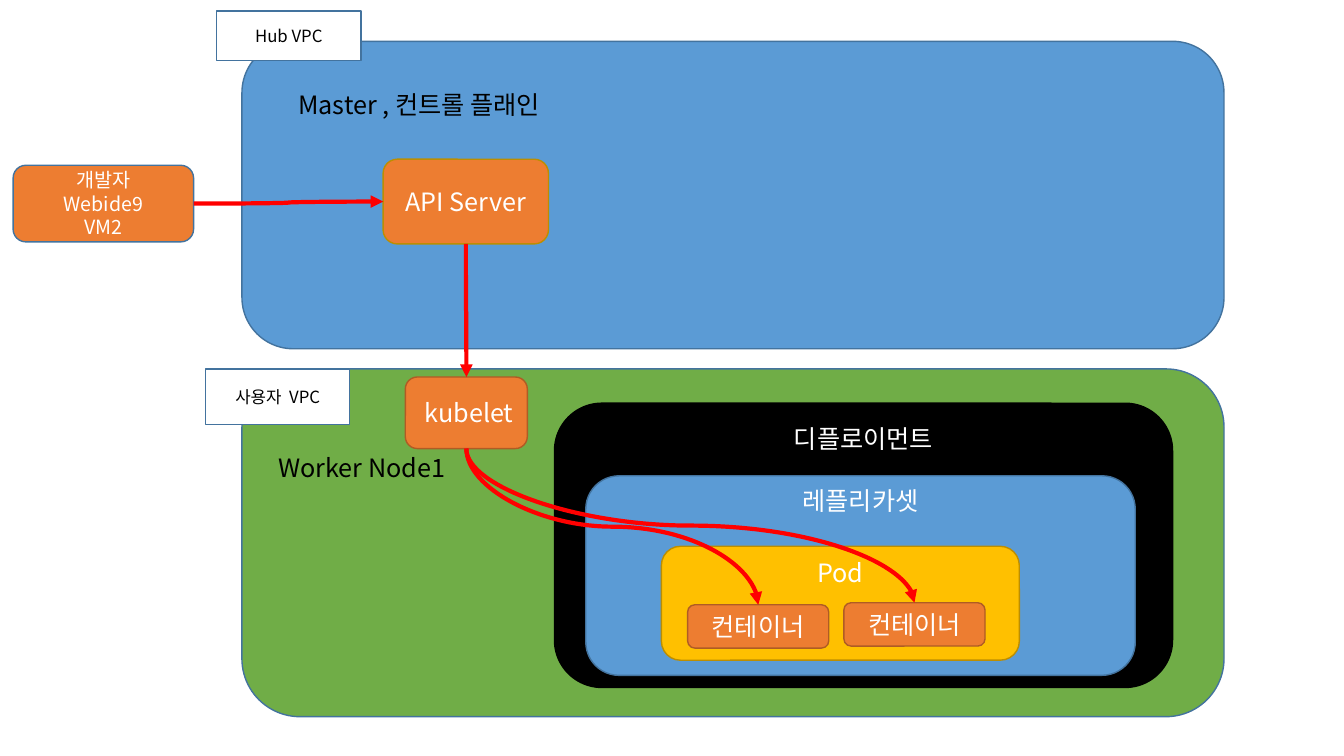
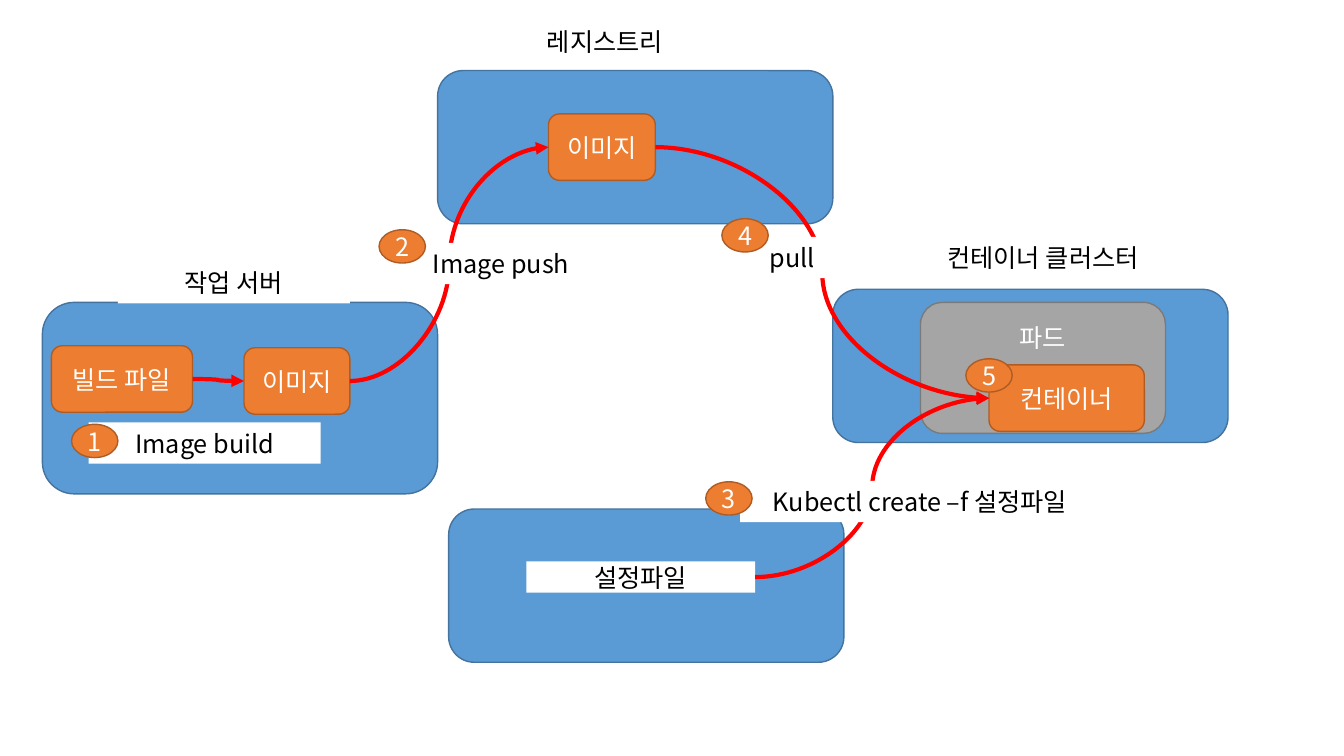
from lxml import etree
from pptx import Presentation
from pptx.dml.color import RGBColor
from pptx.enum.shapes import MSO_CONNECTOR, MSO_SHAPE
from pptx.enum.text import MSO_ANCHOR, PP_ALIGN
from pptx.oxml.ns import qn
from pptx.util import Inches, Pt

ROUND, RECT, OVAL = MSO_SHAPE.ROUNDED_RECTANGLE, MSO_SHAPE.RECTANGLE, MSO_SHAPE.OVAL
CURVE = MSO_CONNECTOR.CURVE
TOP, MIDDLE = MSO_ANCHOR.TOP, MSO_ANCHOR.MIDDLE
LEFT, CENTER = PP_ALIGN.LEFT, PP_ALIGN.CENTER

FONT = "Noto Sans CJK KR"
WHITE, BLACK, RED = "FFFFFF", "000000", "FF0000"
BLUE, ORANGE, GREEN, GOLD, GRAY = "5B9BD5", "ED7D31", "70AD47", "FFC000", "A5A5A5"
BLUE_EDGE, ORANGE_EDGE, GOLD_EDGE, GRAY_EDGE = "43739E", "AF5C24", "BD8E00", "7A7A7A"

# Style: preset (None for a plain text box), fill, line, text colour, text size
STYLES = {
    "zone": (ROUND, BLUE, BLUE_EDGE, WHITE, 18),
    "worker": (ROUND, GREEN, BLUE_EDGE, WHITE, 18),
    "deploy": (ROUND, BLACK, BLACK, WHITE, 18),
    "pod": (ROUND, GOLD, GOLD_EDGE, WHITE, 18),
    "gray pod": (ROUND, GRAY, GRAY_EDGE, WHITE, 18),
    "node": (ROUND, ORANGE, ORANGE_EDGE, WHITE, 18),
    "server": (ROUND, ORANGE, GOLD_EDGE, WHITE, 18),
    "client": (ROUND, ORANGE, BLUE_EDGE, WHITE, 14),
    "tag": (RECT, WHITE, BLUE_EDGE, BLACK, 12),
    "label": (RECT, WHITE, None, BLACK, 18),
    "heading": (None, None, None, BLACK, 18),
    "badge": (OVAL, ORANGE, ORANGE_EDGE, WHITE, 18),
}
# Text frame settings that differ from the centred default
FRAMES = {
    "heading": {"vertical_anchor": TOP},
    "badge": {"margin_left": 0, "margin_right": 0, "margin_top": 0, "margin_bottom": 0},
}

# Places are left, top, width, height in grid cells (1333 columns, 750 rows).
# A last number is the gap above a caption set at the top of its box.
SLIDES = [
    {
        "boxes": [
            ("client", "client", (13, 164, 179, 76), "개발자\nWebide9\nVM2"),
            ("master", "zone", (240, 41, 974, 305), ""),
            ("master tag", "tag", (215, 11, 143, 49), "Hub VPC"),
            ("api", "server", (380, 158, 164, 84), "API Server"),
            ("worker", "worker", (240, 366, 974, 345), ""),
            ("worker tag", "tag", (204, 366, 143, 55), "사용자  VPC"),
            ("deployment", "deploy", (550, 400, 613, 282), "디플로이먼트", 6.5),
            ("replica set", "zone", (581, 472, 545, 198), "레플리카셋", 0),
            ("pod", "pod", (656, 542, 355, 113), "Pod", 5),
            ("container 1", "node", (682, 600, 140, 43), "컨테이너"),
            ("container 2", "node", (837, 598, 140, 43), "컨테이너"),
            ("worker heading", "heading", (266, 444, 202, 40), "Worker Node1"),
            ("master heading", "heading", (286, 84, 311, 40), "Master , 컨트롤 플래인"),
            ("kubelet", "node", (402, 374, 121, 71), " kubelet"),
        ],
        "arrows": [
            ("client", "api", "across"),
            ("api", "kubelet", "down"),
            ("kubelet", "container 2", "down"),
            ("kubelet", "container 1", "down"),
        ],
        "labels": [],
    },
    {
        "boxes": [
            ("work server", "zone", (42, 300, 392, 190), ""),
            ("registry", "zone", (434, 70, 392, 152), ""),
            ("cluster", "zone", (826, 287, 392, 152), ""),
            ("settings", "zone", (445, 505, 392, 152), ""),
            ("build file", "node", (51, 343, 140, 66), "빌드 파일"),
            ("built image", "node", (242, 345, 105, 66), "이미지"),
            ("stored image", "node", (544, 113, 106, 66), "이미지"),
            ("pod", "gray pod", (913, 300, 243, 130), "파드", 13),
            ("settings file", "label", (522, 557, 227, 31), "설정파일"),
            ("container", "node", (981, 362, 154, 66), "컨테이너"),
        ],
        "arrows": [
            ("build file", "built image", "across"),
            ("built image", "stored image", "across"),
            ("stored image", "container", "across"),
            ("settings file", "container", "across"),
        ],
        "labels": [
            ("work server name", "label", (117, 260, 230, 41), "작업 서버"),
            ("registry name", "label", (485, 21, 230, 41), "레지스트리"),
            ("cluster name", "label", (891, 235, 287, 41), "컨테이너 클러스터"),
            ("build", "label", (88, 419, 230, 41), "Image build"),
            ("push", "label", (382, 241, 230, 41), "Image push"),
            ("pull", "label", (671, 235, 230, 41), "pull"),
            ("create", "label", (734, 477, 357, 41), "Kubectl create –f 설정파일"),
            ("step 1", "badge", (71, 421, 46, 33), "1"),
            ("step 2", "badge", (376, 228, 46, 33), "2"),
            ("step 3", "badge", (700, 478, 46, 33), "3"),
            ("step 4", "badge", (716, 217, 46, 33), "4"),
            ("step 5", "badge", (958, 356, 46, 33), "5"),
        ],
    },
]

prs = Presentation()
prs.slide_width, prs.slide_height = Inches(13.33), Inches(7.5)
COL, ROW = prs.slide_width / 1333, prs.slide_height / 750


def paint(fmt, color):
    """Give a fill or font colour format a solid hex colour, or no fill."""
    if color is None:
        fmt.background()
    else:
        fmt.solid()
        fmt.fore_color.rgb = RGBColor.from_string(color)


def add_box(s, style, place, text, gap=None):
    preset, fill, line, color, size = STYLES[style]
    x, y, w, h = place
    area = int(x * COL), int(y * ROW), int(w * COL), int(h * ROW)
    if preset is None:
        sp = s.shapes.add_textbox(*area)
    else:
        sp = s.shapes.add_shape(preset, *area)
        sp.shadow.inherit = False
        paint(sp.fill, fill)
        paint(sp.line.fill, line)
        if line:
            sp.line.width = Pt(1)
    if not text:
        return
    tf = sp.text_frame
    frame = {"word_wrap": True, "vertical_anchor": MIDDLE} | FRAMES.get(style, {})
    if gap is not None:
        frame |= {"vertical_anchor": TOP, "margin_top": int(gap * ROW)}
    for key, value in frame.items():
        setattr(tf, key, value)
    tf.text = text
    for p in tf.paragraphs:
        p.alignment = LEFT if style == "heading" else CENTER
        p.line_spacing = Pt(size * 1.2)
        for r in p.runs:
            r.font.name, r.font.size = FONT, Pt(size)
            paint(r.font.fill, color)
            etree.SubElement(r.font._element, qn("a:ea"), typeface=FONT)


for content in SLIDES:
    s = prs.slides.add_slide(prs.slide_layouts[6])
    for box in content["boxes"]:
        add_box(s, *box[1:])

    # Curved arrows run from edge middle to edge middle
    places = {box[0]: box[2] for box in content["boxes"]}
    for start, end, way in content["arrows"]:
        ax, ay, aw, ah = places[start]
        bx, by, bw, bh = places[end]
        if way == "across":
            x1, y1, x2, y2 = ax + aw, ay + ah / 2, bx, by + bh / 2
        else:
            x1, y1, x2, y2 = ax + aw / 2, ay + ah, bx + bw / 2, by
        x1, x2, y1, y2 = int(x1 * COL), int(x2 * COL), int(y1 * ROW), int(y2 * ROW)
        if way == "across":
            cx = s.shapes.add_connector(CURVE, x1, y1, x2, y2)
        else:
            # A downward curve is an across curve, mirrored and turned
            mx, my, dx, dy = (x1 + x2) // 2, (y1 + y2) // 2, abs(x2 - x1), y2 - y1
            cx = s.shapes.add_connector(CURVE, mx - dy // 2, my - dx // 2,
                                        mx + dy // 2, my + dx // 2)
            xfrm = cx._element.spPr.find(qn("a:xfrm"))
            xfrm.set("rot", str(270 * 60000))
            xfrm.set("flipH", "1")
        paint(cx.line.fill, RED)
        cx.line.width = Pt(3)
        etree.SubElement(cx.line._get_or_add_ln(), qn("a:tailEnd"), type="triangle")
        etree.SubElement(cx._element.spPr, qn("a:effectLst"))

    # Labels and step numbers lie over the arrows
    for label in content["labels"]:
        add_box(s, *label[1:])

prs.save("out.pptx")
